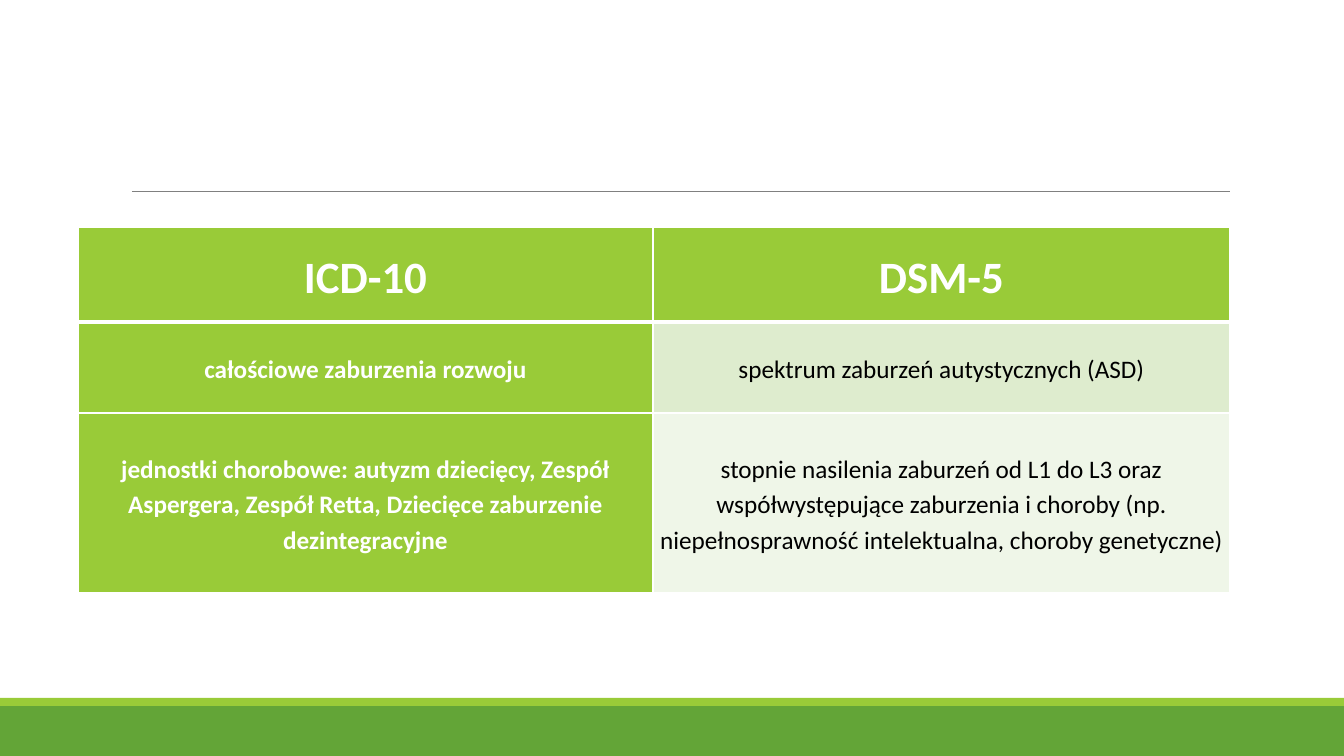
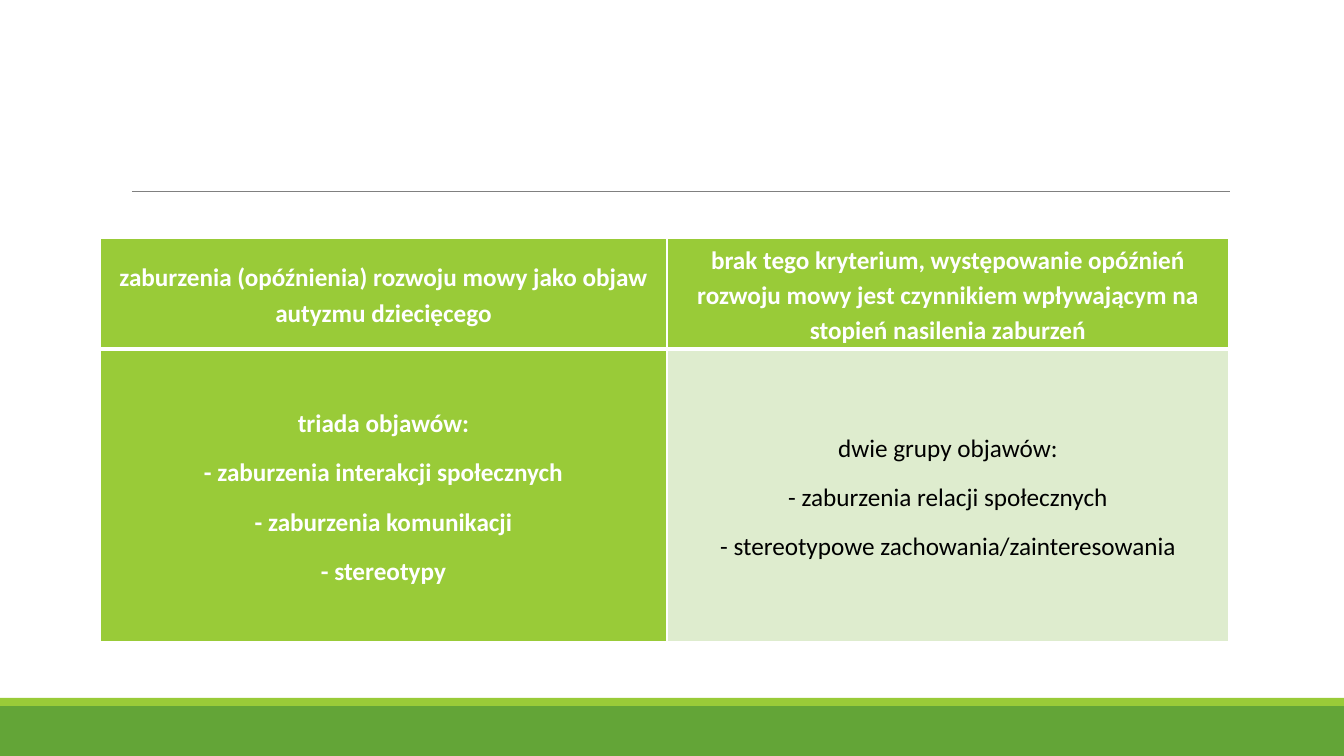
"""Builds two slides comparing the ICD-10 and DSM-5 descriptions of autism."""
from lxml import etree
from pptx import Presentation
from pptx.dml.color import RGBColor
from pptx.enum.shapes import MSO_CONNECTOR, MSO_SHAPE
from pptx.enum.text import MSO_ANCHOR, PP_ALIGN
from pptx.oxml.ns import qn
from pptx.util import Emu, Pt

STRAIGHT = MSO_CONNECTOR.STRAIGHT
RECTANGLE = MSO_SHAPE.RECTANGLE
MIDDLE = MSO_ANCHOR.MIDDLE
CENTER = PP_ALIGN.CENTER

FONT = "Calibri"
WHITE = RGBColor(0xFF, 0xFF, 0xFF)
BLACK = RGBColor(0x00, 0x00, 0x00)
GREY = RGBColor(0x80, 0x80, 0x80)
LIME = RGBColor(0x99, 0xCB, 0x38)
GREEN = RGBColor(0x63, 0xA5, 0x37)
PALE_ROWS = [RGBColor(0xDE, 0xEC, 0xCE), RGBColor(0xEF, 0xF6, 0xE8)]

SLIDE_W, SLIDE_H = 1344, 756
BANDS = [(706, 50, GREEN), (698, 8, LIME)]
RULE_LEFT, RULE_RIGHT, RULE_Y = 132, 1230, 191
THIN, THICK = 1, 3

COMPARISONS = [
    {
        "left": 78, "top": 227, "columns": [575, 577], "rows": [95, 91, 180],
        "header_size": 32,
        "texts": [
            [["ICD-10"], ["DSM-5"]],
            [["całościowe zaburzenia rozwoju"],
             ["spektrum zaburzeń autystycznych (ASD)"]],
            [["jednostki chorobowe: autyzm dziecięcy, Zespół Aspergera, "
              "Zespół Retta, Dziecięce zaburzenie dezintegracyjne"],
             ["stopnie nasilenia zaburzeń od L1 do L3 oraz współwystępujące "
              "zaburzenia i choroby (np. niepełnosprawność intelektualna, "
              "choroby genetyczne)"]],
        ],
    },
    {
        "left": 100, "top": 238, "columns": [567, 562], "rows": [111, 293],
        "header_size": 18,
        "texts": [
            [["zaburzenia (opóźnienia) rozwoju mowy jako objaw autyzmu dziecięcego"],
             ["brak tego kryterium, występowanie opóźnień rozwoju mowy jest "
              "czynnikiem wpływającym na stopień nasilenia zaburzeń"]],
            [["triada objawów:", "- zaburzenia interakcji społecznych",
              "- zaburzenia komunikacji", "- stereotypy"],
             ["dwie grupy objawów:", "- zaburzenia relacji społecznych",
              "- stereotypowe zachowania/zainteresowania"]],
        ],
    },
]


def px(length):
    """Turn pixels into EMU."""
    return Emu(round(length * 914400 / 100.8))


def add_borders(cell, top, bottom):
    """Give a cell white borders, thin at the sides."""
    properties = cell._tc.get_or_add_tcPr()
    widths = [("a:lnL", THIN), ("a:lnR", THIN), ("a:lnT", top), ("a:lnB", bottom)]
    for position, (tag, width) in enumerate(widths):
        border = etree.Element(qn(tag), w=str(Pt(width)))
        fill = etree.SubElement(border, qn("a:solidFill"))
        etree.SubElement(fill, qn("a:srgbClr"), val=str(WHITE))
        properties.insert(position, border)


prs = Presentation()
prs.slide_width, prs.slide_height = px(SLIDE_W), px(SLIDE_H)
blank = prs.slide_layouts[6]

for comparison in COMPARISONS:
    slide = prs.slides.add_slide(blank)

    for band_top, band_height, color in BANDS:
        band = slide.shapes.add_shape(
            RECTANGLE, 0, px(band_top), prs.slide_width, px(band_height))
        band.shadow.inherit = False
        band.fill.solid()
        band.fill.fore_color.rgb = color
        band.line.fill.background()

    title_rule = slide.shapes.add_connector(
        STRAIGHT, px(RULE_LEFT), px(RULE_Y), px(RULE_RIGHT), px(RULE_Y))
    title_rule.line.color.rgb = GREY
    title_rule.line.width = Pt(0.5)
    etree.SubElement(title_rule._element.spPr, qn("a:effectLst"))

    columns, rows = comparison["columns"], comparison["rows"]
    table = slide.shapes.add_table(
        len(rows), len(columns), px(comparison["left"]), px(comparison["top"]),
        px(sum(columns)), px(sum(rows))).table
    for column, width in zip(table.columns, columns):
        column.width = px(width)
    for row, height in zip(table.rows, rows):
        row.height = px(height)

    for r, row_texts in enumerate(comparison["texts"]):
        for c, lines in enumerate(row_texts):
            emphasized = r == 0 or c == 0
            cell = table.cell(r, c)
            cell.vertical_anchor = MIDDLE
            cell.margin_left = cell.margin_right = px(1)
            cell.margin_top = cell.margin_bottom = px(1)
            cell.fill.solid()
            cell.fill.fore_color.rgb = LIME if emphasized else PALE_ROWS[r - 1]
            add_borders(cell, THICK if r == 1 else THIN, THICK if r == 0 else THIN)

            frame = cell.text_frame
            for i, line in enumerate(lines):
                paragraph = frame.add_paragraph() if i else frame.paragraphs[0]
                paragraph.alignment = CENTER
                paragraph.line_spacing = 1.15
                paragraph.space_after = Pt(10)
                run = paragraph.add_run()
                run.text = line
                run.font.name = FONT
                run.font.size = Pt(comparison["header_size"] if r == 0 else 18)
                run.font.bold = emphasized
                run.font.color.rgb = WHITE if emphasized else BLACK

prs.save("out.pptx")
